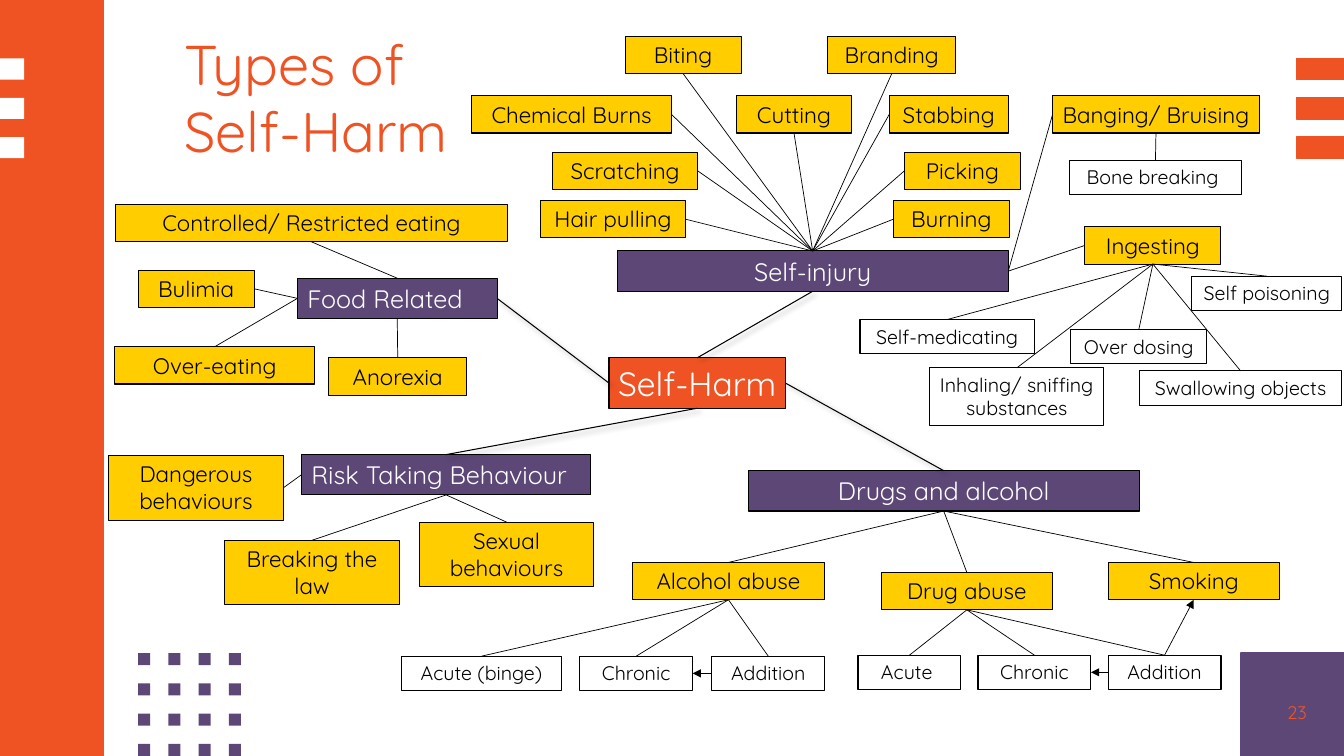
from dataclasses import dataclass

from lxml import etree
from pptx import Presentation
from pptx.dml.color import RGBColor
from pptx.enum.shapes import MSO_CONNECTOR, MSO_SHAPE
from pptx.enum.text import MSO_ANCHOR, PP_ALIGN
from pptx.oxml.ns import qn
from pptx.util import Inches, Pt

RECTANGLE = MSO_SHAPE.RECTANGLE
STRAIGHT = MSO_CONNECTOR.STRAIGHT
ANCHOR_TOP, ANCHOR_MIDDLE = MSO_ANCHOR.TOP, MSO_ANCHOR.MIDDLE
LEFT, CENTER, RIGHT = PP_ALIGN.LEFT, PP_ALIGN.CENTER, PP_ALIGN.RIGHT

ORANGE = RGBColor(0xEF, 0x53, 0x23)
PURPLE = RGBColor(0x5D, 0x47, 0x77)
YELLOW = RGBColor(0xFF, 0xCD, 0x00)
WHITE = RGBColor(0xFF, 0xFF, 0xFF)
BLACK = RGBColor(0x00, 0x00, 0x00)
FONT = "Quicksand"

# Connection sites of a rectangle
TOP_SIDE, LEFT_SIDE, BOTTOM_SIDE, RIGHT_SIDE = range(4)


@dataclass(frozen=True)
class Level:
    fill: RGBColor
    color: RGBColor
    size: int
    height: float
    side_margin: float = 0.1


ROOT = Level(ORANGE, WHITE, 24, 0.5, side_margin=0.02)
CATEGORY = Level(PURPLE, WHITE, 18, 0.4)
KIND = Level(YELLOW, BLACK, 16, 0.37)
TALL_KIND = Level(YELLOW, BLACK, 16, 0.64)
DETAIL = Level(WHITE, BLACK, 14, 0.34)
TALL_DETAIL = Level(WHITE, BLACK, 14, 0.57)

# Each child: text, left, top, width, its own side and the parent's side that the line joins
FOOD_KINDS = [
    ("Controlled/ Restricted eating", 1.15, 2.03, 3.88, BOTTOM_SIDE, TOP_SIDE),
    ("Bulimia", 1.37, 2.68, 1.15, RIGHT_SIDE, LEFT_SIDE),
    ("Over-eating", 1.14, 3.44, 1.98, TOP_SIDE, LEFT_SIDE),
    ("Anorexia", 3.26, 3.55, 1.37, TOP_SIDE, BOTTOM_SIDE),
]
RISK_KINDS = [
    ("Dangerous behaviours", 1.08, 4.52, 1.73, RIGHT_SIDE, LEFT_SIDE),
    ("Breaking the law", 2.23, 5.36, 1.73, TOP_SIDE, BOTTOM_SIDE),
    ("Sexual behaviours", 4.16, 5.18, 1.73, TOP_SIDE, BOTTOM_SIDE),
]
INJURY_KINDS = [
    ("Biting", 6.2, 0.36, 1.15, BOTTOM_SIDE, TOP_SIDE),
    ("Branding", 8.21, 0.36, 1.27, BOTTOM_SIDE, TOP_SIDE),
    ("Chemical Burns", 4.68, 0.95, 1.98, RIGHT_SIDE, TOP_SIDE),
    ("Cutting", 7.3, 0.95, 1.15, BOTTOM_SIDE, TOP_SIDE),
    ("Stabbing", 8.82, 0.95, 1.18, LEFT_SIDE, TOP_SIDE),
    ("Scratching", 5.48, 1.51, 1.44, RIGHT_SIDE, TOP_SIDE),
    ("Picking", 8.97, 1.51, 1.15, LEFT_SIDE, TOP_SIDE),
    ("Hair pulling", 5.36, 1.99, 1.44, RIGHT_SIDE, TOP_SIDE),
    ("Burning", 8.86, 1.99, 1.15, LEFT_SIDE, TOP_SIDE),
    ("Banging/ Bruising", 10.44, 0.95, 2.05, LEFT_SIDE, RIGHT_SIDE),
    ("Ingesting", 10.76, 2.25, 1.35, LEFT_SIDE, RIGHT_SIDE),
]
DRUG_KINDS = [
    ("Alcohol abuse", 6.27, 5.58, 1.91, TOP_SIDE, BOTTOM_SIDE),
    ("Drug abuse", 8.74, 5.68, 1.7, TOP_SIDE, BOTTOM_SIDE),
    ("Smoking", 10.99, 5.58, 1.7, TOP_SIDE, BOTTOM_SIDE),
]
BRUISING_DETAILS = [("Bone breaking ", 10.61, 1.59, 1.7, TOP_SIDE, BOTTOM_SIDE)]
INGESTING_DETAILS = [
    ("Self-medicating", 8.53, 3.17, 1.73, TOP_SIDE, BOTTOM_SIDE),
    ("Over dosing", 10.62, 3.27, 1.35, TOP_SIDE, BOTTOM_SIDE),
    ("Self poisoning", 11.82, 2.74, 1.49, TOP_SIDE, BOTTOM_SIDE),
    ("Swallowing objects", 11.3, 3.68, 2.01, TOP_SIDE, BOTTOM_SIDE),
]
INHALING_DETAILS = [
    ("Inhaling/ sniffing substances", 9.22, 3.65, 1.73, TOP_SIDE, BOTTOM_SIDE),
]
ALCOHOL_DETAILS = [
    ("Acute (binge)", 3.98, 6.51, 1.59, TOP_SIDE, BOTTOM_SIDE),
    ("Chronic", 5.75, 6.51, 1.12, TOP_SIDE, BOTTOM_SIDE),
    ("Addition", 7.06, 6.51, 1.12, TOP_SIDE, BOTTOM_SIDE),
]
DRUG_DETAILS = [
    ("Acute ", 8.51, 6.5, 1.02, TOP_SIDE, BOTTOM_SIDE),
    ("Chronic", 9.7, 6.5, 1.12, TOP_SIDE, BOTTOM_SIDE),
    ("Addition", 10.99, 6.5, 1.12, TOP_SIDE, BOTTOM_SIDE),
]


def write(shape, text, *, size, color, align=LEFT, anchor=ANCHOR_TOP, side_margin=0.1):
    frame = shape.text_frame
    frame.word_wrap = True
    frame.vertical_anchor = anchor
    frame.margin_left = frame.margin_right = Inches(side_margin)
    paragraph = frame.paragraphs[0]
    paragraph.alignment = align
    run = paragraph.add_run()
    run.text = text
    run.font.name = FONT
    run.font.size = Pt(size)
    run.font.color.rgb = color


def add_block(slide, left, top, width, height, fill, line=None, line_width=1):
    block = slide.shapes.add_shape(
        RECTANGLE, Inches(left), Inches(top), Inches(width), Inches(height))
    block.shadow.inherit = False
    block.fill.solid()
    block.fill.fore_color.rgb = fill
    if line is None:
        block.line.fill.background()
    else:
        block.line.color.rgb = line
        block.line.width = Pt(line_width)
    return block


def add_label(slide, text, left, top, width, height, **text_format):
    label = slide.shapes.add_textbox(
        Inches(left), Inches(top), Inches(width), Inches(height))
    write(label, text, **text_format)


def add_node(slide, text, left, top, width, level, align=CENTER):
    node = add_block(slide, left, top, width, level.height, level.fill, BLACK, 0.75)
    write(node, text, size=level.size, color=level.color, align=align,
          side_margin=level.side_margin)
    return node


def link(slide, start, start_side, end, end_side, *, width=0.5, arrow=False, shadow=False):
    connector = slide.shapes.add_connector(STRAIGHT, 0, 0, 0, 0)
    connector.begin_connect(start, start_side)
    connector.end_connect(end, end_side)
    connector.line.color.rgb = BLACK
    connector.line.width = Pt(width)
    if arrow:
        etree.SubElement(connector.line._get_or_add_ln(), qn("a:tailEnd"), type="triangle")
    effects = etree.SubElement(connector._element.spPr, qn("a:effectLst"))
    if shadow:
        outer = etree.SubElement(
            effects, qn("a:outerShdw"), blurRad=str(Pt(4)), dist=str(Pt(3)),
            dir=str(45 * 60000), rotWithShape="0")
        tint = etree.SubElement(outer, qn("a:srgbClr"), val=str(BLACK))
        etree.SubElement(tint, qn("a:alpha"), val="40000")


def add_branch(slide, parent, children, level):
    """Draw the children, link each to the parent and return them in order."""
    nodes = []
    for text, left, top, width, side, parent_side in children:
        node = add_node(slide, text, left, top, width, level)
        link(slide, parent, parent_side, node, side)
        nodes.append(node)
    return nodes


def add_decoration(slide):
    add_block(slide, 12.31, 6.48, 1.02, 1.02, PURPLE, PURPLE)
    add_block(slide, 0, 0, 1.03, 7.5, ORANGE, ORANGE)
    for row in range(3):
        top = 0.58 + row * 0.39
        add_block(slide, 12.86, top, 0.47, 0.21, ORANGE, ORANGE)
        add_block(slide, 0, top, 0.24, 0.21, WHITE)
    for row in range(4):
        for column in range(4):
            add_block(slide, 1.37 + column * 0.3, 6.48 + row * 0.3, 0.12, 0.12, PURPLE)


def add_mind_map(slide):
    root = add_node(slide, "Self-Harm", 6.04, 3.55, 1.75, ROOT)
    food = add_node(slide, "Food Related", 2.95, 2.76, 1.98, CATEGORY, LEFT)
    risk = add_node(slide, "Risk Taking Behaviour", 2.99, 4.51, 2.87, CATEGORY, LEFT)
    drugs = add_node(slide, "Drugs and alcohol", 7.42, 4.67, 3.88, CATEGORY)
    injury = add_node(slide, "Self-injury", 6.12, 2.49, 3.88, CATEGORY)
    for root_side, category, side in (
            (LEFT_SIDE, food, RIGHT_SIDE), (BOTTOM_SIDE, risk, TOP_SIDE),
            (RIGHT_SIDE, drugs, TOP_SIDE), (TOP_SIDE, injury, BOTTOM_SIDE)):
        link(slide, root, root_side, category, side, width=0.75, shadow=True)

    add_branch(slide, food, FOOD_KINDS, KIND)
    add_branch(slide, risk, RISK_KINDS, TALL_KIND)
    *_, bruising, ingesting = add_branch(slide, injury, INJURY_KINDS, KIND)
    add_branch(slide, bruising, BRUISING_DETAILS, DETAIL)
    add_branch(slide, ingesting, INGESTING_DETAILS, DETAIL)
    add_branch(slide, ingesting, INHALING_DETAILS, TALL_DETAIL)

    alcohol_abuse, drug_abuse, smoking = add_branch(slide, drugs, DRUG_KINDS, KIND)
    for abuse, details in ((alcohol_abuse, ALCOHOL_DETAILS), (drug_abuse, DRUG_DETAILS)):
        _, chronic, addition = add_branch(slide, abuse, details, DETAIL)
        link(slide, addition, LEFT_SIDE, chronic, RIGHT_SIDE, arrow=True)
    link(slide, addition, TOP_SIDE, smoking, BOTTOM_SIDE, arrow=True)


def main():
    deck = Presentation()
    deck.slide_width, deck.slide_height = Inches(13.33), Inches(7.5)
    slide = deck.slides.add_slide(deck.slide_layouts[6])
    add_decoration(slide)
    add_label(slide, "23", 12.66, 6.87, 0.4, 0.4,
              size=13, color=ORANGE, align=RIGHT, anchor=ANCHOR_MIDDLE)
    add_label(slide, "Types of Self-Harm", 1.73, 0.24, 3.04, 1.45, size=40, color=ORANGE)
    add_mind_map(slide)
    deck.save("out.pptx")


if __name__ == "__main__":
    main()
